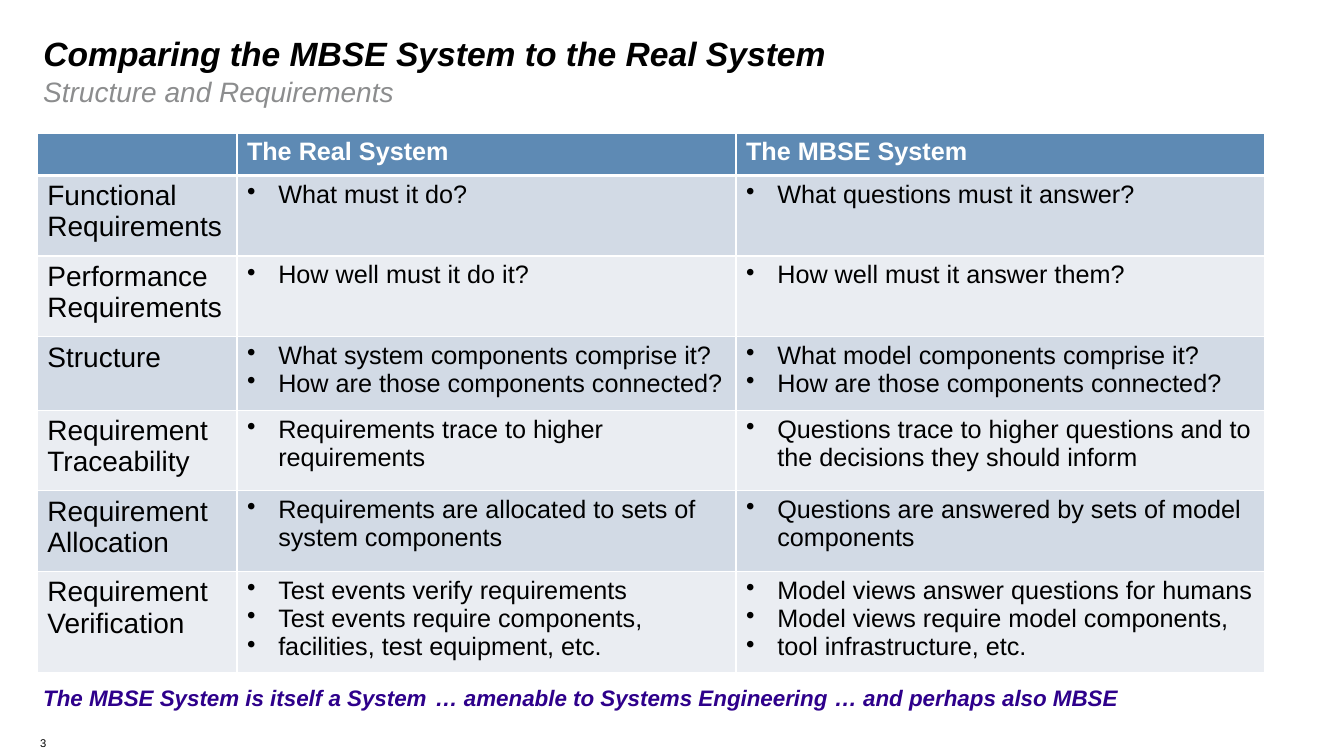
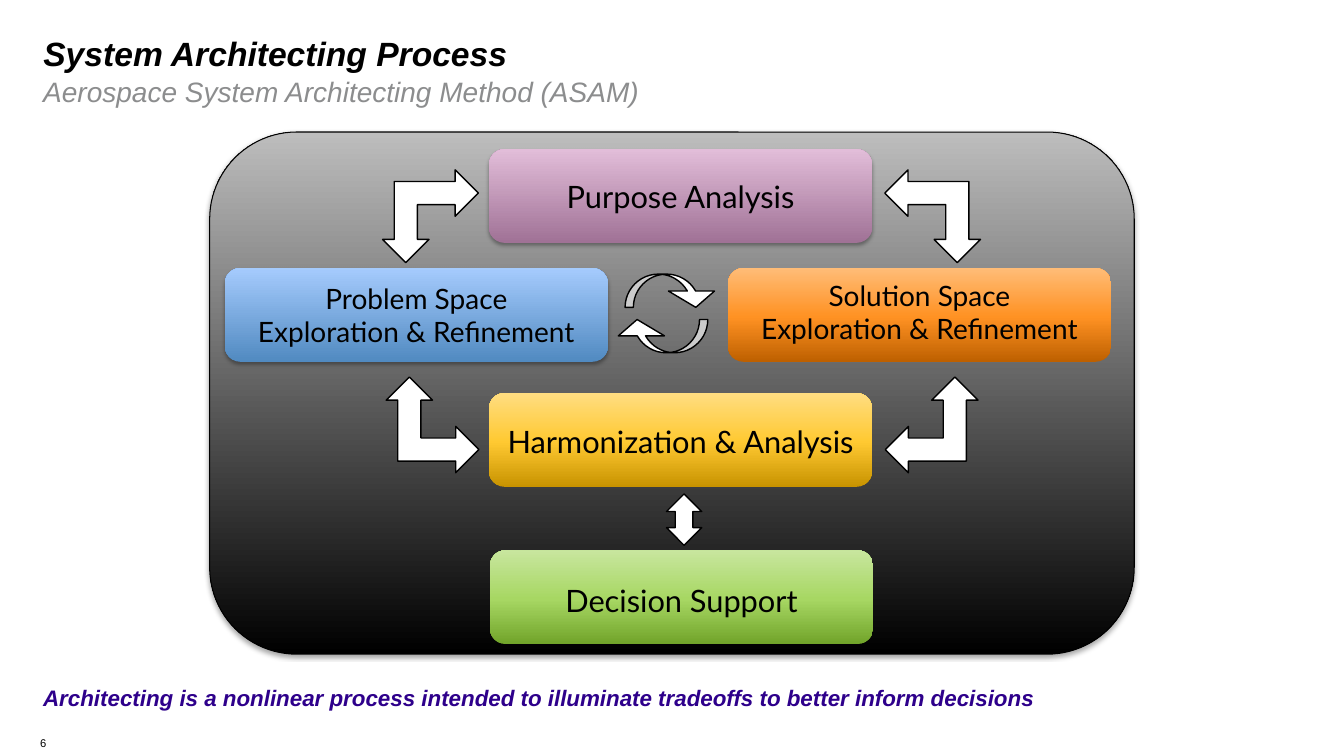
from lxml import etree
from pptx import Presentation
from pptx.dml.color import RGBColor
from pptx.enum.shapes import MSO_SHAPE
from pptx.enum.text import MSO_ANCHOR, MSO_AUTO_SIZE, PP_ALIGN
from pptx.oxml.ns import qn
from pptx.util import Pt

PX = 9144  # 100 px to the inch
TITLE_ONLY = 5
LEFT, CENTER = PP_ALIGN.LEFT, PP_ALIGN.CENTER
TOP, MIDDLE = MSO_ANCHOR.TOP, MSO_ANCHOR.MIDDLE
ROUNDED, ELBOW = MSO_SHAPE.ROUNDED_RECTANGLE, MSO_SHAPE.LEFT_UP_ARROW
CURVED, UP_DOWN = MSO_SHAPE.CURVED_LEFT_ARROW, MSO_SHAPE.UP_DOWN_ARROW


class Theme:
    black, white = "000000", "FFFFFF"
    header, bands = "5E8AB4", ("EAEDF2", "D2DAE5")
    # Text styles: colour and font values
    title = black, dict(name="Arial", size=Pt(24), bold=True, italic=True)
    subtitle = "8C8D8E", dict(name="Arial", size=Pt(20), bold=False, italic=True)
    takeaway = "2E008B", dict(name="Arial", size=Pt(16), bold=True, italic=True)
    number = black, dict(name="Arial", size=Pt(8))
    head = white, dict(name="Arial", size=Pt(18), bold=True)
    label = black, dict(name="Arial", size=Pt(20), bold=False)
    item = black, dict(name="Arial", size=Pt(18), bold=False)
    step = black, dict(name="Lato", size=Pt(22))
    step_small = black, dict(name="Lato", size=Pt(20))


def px(*lengths):
    return [n * PX for n in lengths]


def write(tf, lines, style, align=LEFT, anchor=TOP, bullets=False):
    color, fmt = style
    tf.word_wrap = True
    tf.vertical_anchor = anchor
    for i, line in enumerate(lines):
        p = tf.add_paragraph() if i else tf.paragraphs[0]
        p.alignment = align
        if bullets:
            pPr = p._p.get_or_add_pPr()
            pPr.set("marL", str(31 * PX))
            pPr.set("indent", str(-31 * PX))
            etree.SubElement(pPr, qn("a:buChar"), char="•")
        r = p.add_run()
        r.text = line
        for key, value in fmt.items():
            setattr(r.font, key, value)
        r.font.color.rgb = RGBColor.from_string(color)


prs = Presentation()
prs.slide_width, prs.slide_height = px(1333, 750)

# Title, subtitle, takeaway and number of each slide
frames = [
    ("3", "Comparing the MBSE System to the Real System", "Structure and Requirements",
     [(33, 412, "The MBSE System is itself a System"),
      (422, 412, "… amenable to Systems Engineering"),
      (818, 309, "… and perhaps also MBSE")]),
    ("6", "System Architecting Process", "Aerospace System Architecting Method (ASAM)",
     [(33, 1236, "Architecting is a nonlinear process intended to illuminate "
                 "tradeoffs to better inform decisions")]),
]
for number, title, subtitle, takeaways in frames:
    s = prs.slides.add_slide(prs.slide_layouts[TITLE_ONLY])
    sp = s.shapes.title
    sp.left, sp.top, sp.width, sp.height = px(33, 25, 1153, 64)
    tf = sp.text_frame
    tf.auto_size = MSO_AUTO_SIZE.NONE
    tf.margin_top = 8 * PX
    write(tf, [title], Theme.title)

    texts = [((33, 67, 1153, 57), subtitle, Theme.subtitle, 7),
             ((30, 726, 101, 24), number, Theme.number, 5)]
    texts += [((x, 673, w, 49), text, Theme.takeaway, 6) for x, w, text in takeaways]
    for box, text, style, inset in texts:
        tf = s.shapes.add_textbox(*px(*box)).text_frame
        tf.margin_top = inset * PX
        write(tf, [text], style)

table_slide, process_slide = prs.slides

# Comparison tables: header row, then lists of bullets
row_heights = [42, 80, 80, 73, 80, 80, 94]
labels = ["", "Functional Requirements", "Performance Requirements", "Structure",
          "Requirement Traceability", "Requirement Allocation", "Requirement Verification"]
real = [
    ["The Real System"],
    ["What must it do?"],
    ["How well must it do it?"],
    ["What system components comprise it?", "How are those components connected?"],
    ["Requirements trace to higher requirements"],
    ["Requirements are allocated to sets of system components"],
    ["Test events verify requirements", "Test events require components,",
     "facilities, test equipment, etc."],
]
mbse = [
    ["The MBSE System"],
    ["What questions must it answer?"],
    ["How well must it answer them?"],
    ["What model components comprise it?", "How are those components connected?"],
    ["Questions trace to higher questions and to the decisions they should inform"],
    ["Questions are answered by sets of model components"],
    ["Model views answer questions for humans", "Model views require model components,",
     "tool infrastructure, etc."],
]
label_column = [[label] if label else [] for label in labels]
tables = [(37, [(198, label_column, Theme.label, False), (496, real, Theme.item, True)]),
          (730, [(524, mbse, Theme.item, True)])]
for x, columns in tables:
    width = sum(column[0] for column in columns)
    table = s_table = table_slide.shapes.add_table(
        len(row_heights), len(columns), *px(x, 132, width, sum(row_heights))).table
    for row, height in zip(table.rows, row_heights):
        row.height = height * PX
    for c, (width, entries, style, bullets) in enumerate(columns):
        table.columns[c].width = width * PX
        for r, lines in enumerate(entries):
            cell = table.cell(r, c)
            tcPr = cell._tc.get_or_add_tcPr()
            for side in "LRTB":
                thick = (r, side) in ((0, "B"), (1, "T"))
                ln = etree.SubElement(tcPr, qn("a:ln" + side), w=str(Pt(3 if thick else 1)))
                fill = etree.SubElement(ln, qn("a:solidFill"))
                etree.SubElement(fill, qn("a:srgbClr"), val=Theme.white)
            cell.fill.solid()
            cell.fill.fore_color.rgb = RGBColor.from_string(
                Theme.bands[r % 2] if r else Theme.header)
            write(cell.text_frame, lines, style if r else Theme.head,
                  bullets=bullets and r > 0)

# Process: panel first, then steps as (box, gradient from the bottom up,
# shadow, lines, style, text drop)
panel = ((208, 131, 917, 518), [(0, "000000"), (100, "BDBDBD")], True, [], Theme.step, 0)
steps = [
    ((485, 148, 380, 93), [(0, "A07296"), (100, "E2BDD9")], True,
     ["Purpose Analysis"], Theme.step, 0),
    ((486, 546, 380, 93), [(0, "71A42A"), (48, "A7D763"), (100, "C8E69E")], False,
     ["Decision Support"], Theme.step, 3),
    ((223, 266, 380, 93), [(0, "518AC1"), (100, "A5CBFD")], True,
     ["Problem Space", "Exploration & Refinement"], Theme.step_small, 0),
    ((722, 266, 380, 93), [(0, "BE6000"), (48, "FF9223"), (100, "FFBC77")], False,
     ["Solution Space", "Exploration & Refinement"], Theme.step_small, -3),
    ((485, 390, 380, 93), [(0, "C89300"), (48, "FFC932"), (100, "FFDD80")], False,
     ["Harmonization & Analysis"], Theme.step, 1),
]
for box, stops, shadow, lines, style, drop in [panel] + steps:
    sp = process_slide.shapes.add_shape(ROUNDED, *px(*box))
    sp.fill.gradient()
    sp.fill.gradient_angle = 90
    gsLst = sp._element.spPr.find(".//" + qn("a:gsLst"))
    for gs in list(gsLst):
        gsLst.remove(gs)
    for pos, color in stops:
        gs = etree.SubElement(gsLst, qn("a:gs"), pos=str(pos * 1000))
        etree.SubElement(gs, qn("a:srgbClr"), val=color)
    if lines:
        sp.line.fill.background()
    else:
        sp.line.color.rgb = RGBColor.from_string(Theme.black)
        sp.line.width = Pt(0.75)
    sp.shadow.inherit = False
    if shadow:
        effects = sp._element.spPr.find(qn("a:effectLst"))
        outer = etree.SubElement(effects, qn("a:outerShdw"), blurRad="39400",
                                 dist="22900", dir="5400000", rotWithShape="0")
        clr = etree.SubElement(outer, qn("a:srgbClr"), val=Theme.black)
        etree.SubElement(clr, qn("a:alpha"), val="35000")
    tf = sp.text_frame
    tf.margin_top, tf.margin_bottom = px(5 + drop, 5 - drop)
    write(tf, lines, style, CENTER, MIDDLE)

# Arrows between the steps: shape, box, rotation, flips, adjustments
bend = [0.25, 1.386, 0.491]
arrows = [
    (CURVED, (639, 287, 33, 93), 90, [], bend),
    (CURVED, (650, 242, 33, 93), 90, ["flipH", "flipV"], bend),
    (ELBOW, (879, 167, 92, 95), 270, [], []),
    (ELBOW, (878, 374, 92, 95), 0, [], []),
    (ELBOW, (381, 167, 92, 95), 90, ["flipH"], []),
    (ELBOW, (383, 374, 92, 95), 0, ["flipH"], []),
    (UP_DOWN, (661, 490, 35, 51), 0, [], []),
]
for kind, box, rotation, flips, adjustments in arrows:
    sp = process_slide.shapes.add_shape(kind, *px(*box))
    sp.rotation = rotation
    for flip in flips:
        sp._element.spPr.xfrm.set(flip, "1")
    for i, value in enumerate(adjustments):
        sp.adjustments[i] = value
    sp.fill.solid()
    sp.fill.fore_color.rgb = RGBColor.from_string(Theme.white)
    sp.line.color.rgb = RGBColor.from_string(Theme.black)
    sp.line.width = Pt(1)
    sp.shadow.inherit = False

prs.save("out.pptx")
